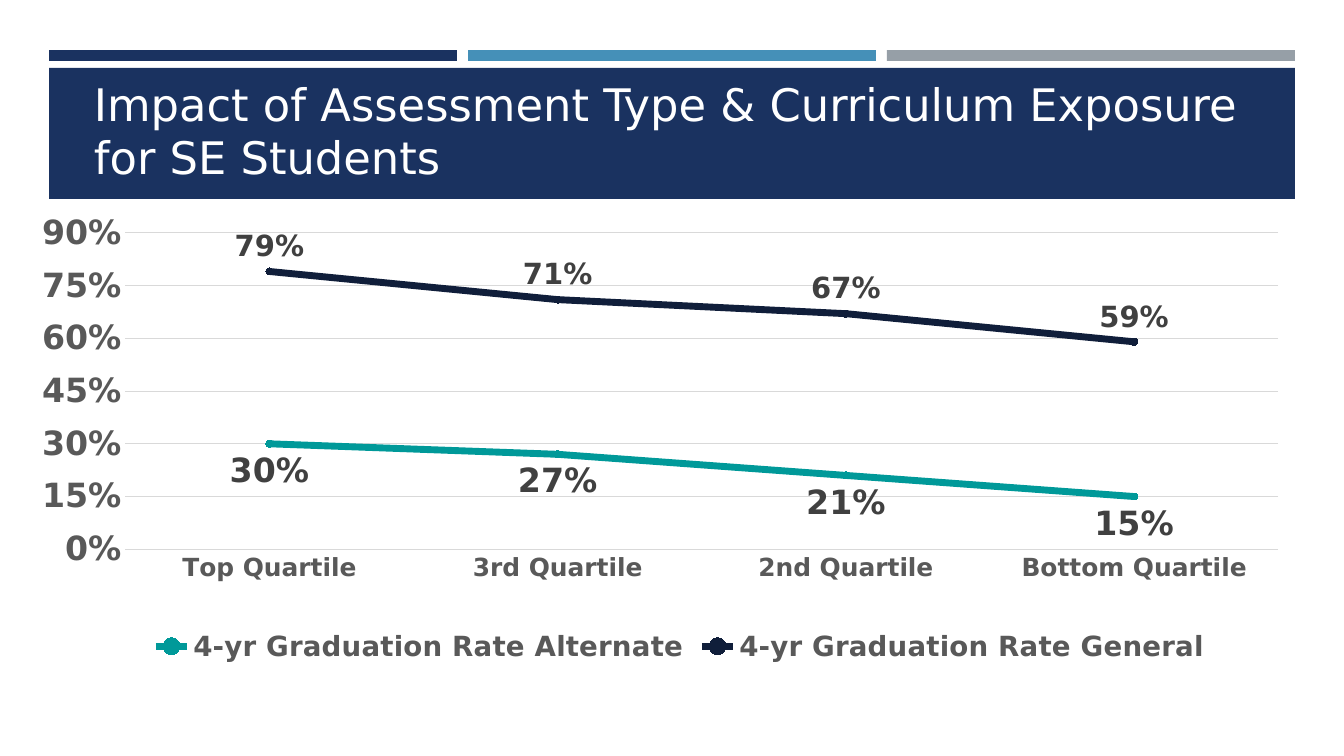
from lxml import etree
from pptx import Presentation
from pptx.chart.data import CategoryChartData
from pptx.dml.color import RGBColor
from pptx.enum.chart import (XL_CHART_TYPE, XL_LABEL_POSITION, XL_LEGEND_POSITION,
                             XL_MARKER_STYLE, XL_TICK_MARK)
from pptx.enum.shapes import MSO_SHAPE
from pptx.enum.text import MSO_ANCHOR
from pptx.oxml.ns import qn
from pptx.util import Pt

RECT = MSO_SHAPE.RECTANGLE
MIDDLE = MSO_ANCHOR.MIDDLE
LINE_MARKERS = XL_CHART_TYPE.LINE_MARKERS
CIRCLE = XL_MARKER_STYLE.CIRCLE
NO_TICK = XL_TICK_MARK.NONE
BOTTOM = XL_LEGEND_POSITION.BOTTOM
ABOVE, BELOW = XL_LABEL_POSITION.ABOVE, XL_LABEL_POSITION.BELOW

NAVY = RGBColor(0x1A, 0x32, 0x60)
BLUE = RGBColor(0x45, 0x90, 0xB8)
GRAY = RGBColor(0x96, 0x9F, 0xA7)
WHITE = RGBColor(0xFF, 0xFF, 0xFF)
TEAL = RGBColor(0x00, 0x99, 0x99)
INK = RGBColor(0x10, 0x1E, 0x3A)
AXIS_TEXT = RGBColor(0x59, 0x59, 0x59)
LABEL_TEXT = RGBColor(0x40, 0x40, 0x40)
GRID = RGBColor(0xD9, 0xD9, 0xD9)
FONT = "DejaVu Sans"

# Content
TITLE = "Impact of Assessment Type & Curriculum Exposure for SE Students"
QUARTILES = ["Top Quartile", "3rd Quartile", "2nd Quartile", "Bottom Quartile"]
SERIES = [  # name, values, color, label position, label size
    ("4-yr Graduation Rate Alternate", (0.30, 0.27, 0.21, 0.15), TEAL, BELOW, 24),
    ("4-yr Graduation Rate General", (0.79, 0.71, 0.67, 0.59), INK, ABOVE, 21),
]
STRIPES = [NAVY, BLUE, GRAY]

# Layout in px
SLIDE = (1344, 756)
STRIPE_LEFT, STRIPE_TOP, STRIPE_W, STRIPE_H, STRIPE_STEP = 49, 50, 408, 11, 419
BANNER = (49, 68, 1246, 131)
TITLE_BOX = (84, 88, 1192, 84)
CHART_BOX = (42, 213, 1260, 455)
PLOT = {"x": 0.054, "y": 0.035, "w": 0.927, "h": 0.702}


def px(n):
    return round(n * 914400 / 100.8)


def add_bar(box, color):
    sp = slide.shapes.add_shape(RECT, *map(px, box))
    sp.shadow.inherit = False
    sp.fill.solid()
    sp.fill.fore_color.rgb = color
    sp.line.fill.background()


def style_font(font, size, color, bold=True):
    font.name, font.size, font.bold = FONT, Pt(size), bold
    font.color.rgb = color


def style_line(line, color, width):
    line.color.rgb = color
    line.width = Pt(width)


prs = Presentation()
prs.slide_width, prs.slide_height = map(px, SLIDE)
slide = prs.slides.add_slide(prs.slide_layouts[6])

# Stripes and title banner
for i, color in enumerate(STRIPES):
    add_bar((STRIPE_LEFT + i * STRIPE_STEP, STRIPE_TOP, STRIPE_W, STRIPE_H), color)
add_bar(BANNER, NAVY)

# Title
tf = slide.shapes.add_textbox(*map(px, TITLE_BOX)).text_frame
tf.word_wrap = True
tf.vertical_anchor = MIDDLE
tf.text = TITLE
style_font(tf.paragraphs[0].runs[0].font, 32, WHITE, bold=False)

# Chart
data = CategoryChartData(number_format="0%")
data.categories = QUARTILES
for name, values, *_ in SERIES:
    data.add_series(name, values)
chart = slide.shapes.add_chart(LINE_MARKERS, *map(px, CHART_BOX), data).chart
chart.has_title = False
chart.font.name, chart.font.size = FONT, Pt(10)

# Lines, markers and value labels
plot = chart.plots[0]
plot.vary_by_categories = False
for series, (_, _, color, position, size) in zip(plot.series, SERIES):
    series.smooth = False
    style_line(series.format.line, color, 5)
    marker = series.marker
    marker.style, marker.size = CIRCLE, 5
    marker.format.fill.solid()
    marker.format.fill.fore_color.rgb = color
    style_line(marker.format.line, color, 0.75)
    labels = series.data_labels
    labels.show_value = True
    labels.position = position
    labels.number_format, labels.number_format_is_linked = "0%", False
    style_font(labels.font, size, LABEL_TEXT)

# Axes
cat_axis, val_axis = chart.category_axis, chart.value_axis
for axis, size in ((cat_axis, 18), (val_axis, 24)):
    axis.major_tick_mark = axis.minor_tick_mark = NO_TICK
    style_font(axis.tick_labels.font, size, AXIS_TEXT)
style_line(cat_axis.format.line, GRID, 0.75)
val_axis.format.line.fill.background()
val_axis.minimum_scale, val_axis.maximum_scale, val_axis.major_unit = 0, 0.9, 0.15
val_axis.tick_labels.number_format = "0%"
val_axis.tick_labels.number_format_is_linked = False
style_line(val_axis.major_gridlines.format.line, GRID, 0.75)

# Legend
chart.has_legend = True
chart.legend.position = BOTTOM
chart.legend.include_in_layout = False
style_font(chart.legend.font, 20, AXIS_TEXT)

# Fixed inner plot area
plot_area = chart.element.find(".//" + qn("c:plotArea"))
layout = plot_area.find(qn("c:layout"))
if layout is None:
    layout = etree.Element(qn("c:layout"))
    plot_area.insert(0, layout)
manual = etree.SubElement(layout, qn("c:manualLayout"))
settings = {"layoutTarget": "inner", "xMode": "edge", "yMode": "edge", **PLOT}
for tag, value in settings.items():
    etree.SubElement(manual, qn("c:" + tag)).set("val", str(value))

prs.save("out.pptx")
